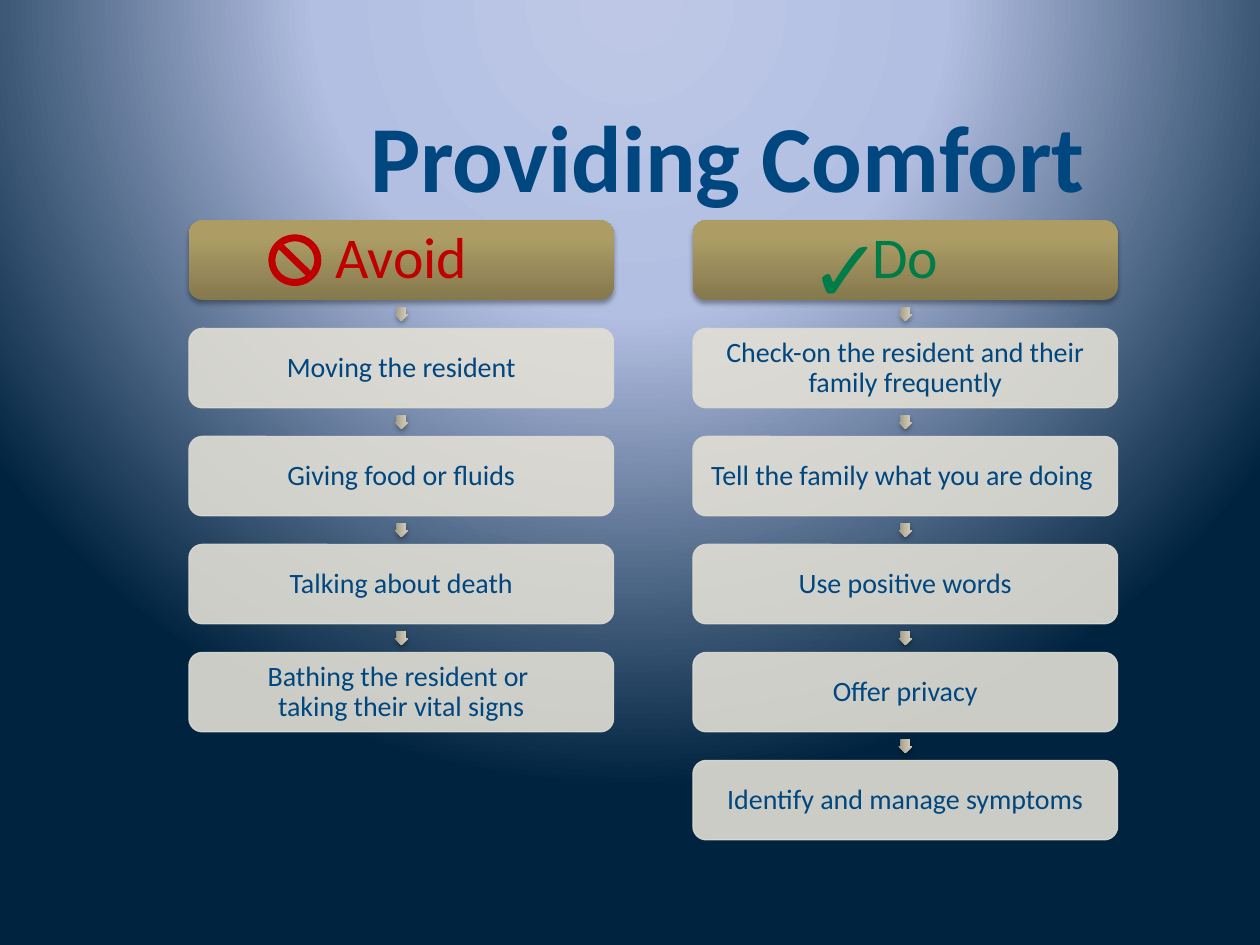
"""Build the Providing Comfort slide: two columns of things to avoid and to do."""
from lxml import etree
from pptx import Presentation
from pptx.dml.color import RGBColor
from pptx.enum.shapes import MSO_SHAPE
from pptx.enum.text import MSO_ANCHOR, MSO_AUTO_SIZE, PP_ALIGN
from pptx.oxml import parse_xml
from pptx.oxml.ns import qn
from pptx.util import Inches, Pt

ROUNDED = MSO_SHAPE.ROUNDED_RECTANGLE
ARROW = MSO_SHAPE.RIGHT_ARROW
NO_SIGN = MSO_SHAPE.NO_SYMBOL
CENTER = PP_ALIGN.CENTER
MIDDLE = MSO_ANCHOR.MIDDLE
GROW = MSO_AUTO_SIZE.SHAPE_TO_FIT_TEXT

TITLE = "Providing Comfort"
AVOID = ("Avoid", "C00000", [
    "Moving the resident",
    "Giving food or fluids",
    "Talking about death",
    "Bathing the resident or \vtaking their vital signs",
])
DO = ("Do", "007C48", [
    "Check-on the resident and their family frequently",
    "Tell the family what you are doing ",
    "Use positive words",
    "Offer privacy",
    "Identify and manage symptoms",
])
COLUMNS = [AVOID, DO]

FONT = "Calibri"
NAVY = "00467F"
BACKDROP = [(0, "BEC8E6"), (40, "B3BFE2"), (100, "00233F")]
GLOW = '<a:path path="circle"><a:fillToRect l="50000" t="-80000" r="50000" b="180000"/></a:path>'
UPWARD = '<a:lin ang="16200000" scaled="0"/>'
HEADING_STOPS = [(0, "85794E"), (80, "AD9D65"), (100, "AF9E64")]
ARROW_STOPS = [(0, "9E9A89"), (80, "CEC7B2"), (100, "CFC9B2")]

SLIDE_W, SLIDE_H = 10, 7.5
LEFT, TOP = 1.5, 1.75
COLUMN_STEP, ROW_STEP = 4, 6 / 7
BOX_W, BOX_H = 3.37, 0.63
ARROW_SIZE = 0.11
A_NS = "http://schemas.openxmlformats.org/drawingml/2006/main"


def color(value):
    return RGBColor.from_string(value)


def inches(*lengths):
    return [Inches(length) for length in lengths]


def set_gradient(fill, parent, stops, direction):
    fill.solid()
    marks = "".join(f'<a:gs pos="{at * 1000}"><a:srgbClr val="{value}"/></a:gs>' for at, value in stops)
    gradient = parse_xml(f'<a:gradFill xmlns:a="{A_NS}" rotWithShape="1">'
                         f"<a:gsLst>{marks}</a:gsLst>{direction}</a:gradFill>")
    solid = parent.find(qn("a:solidFill"))
    parent.replace(solid, gradient)


def add_plain(shapes, kind, *box):
    shape = shapes.add_shape(kind, *inches(*box))
    shape.shadow.inherit = False
    shape.line.fill.background()
    return shape


def add_raised(shapes, kind, stops, *box):
    shape = add_plain(shapes, kind, *box)
    properties = shape.element.spPr
    set_gradient(shape.fill, properties, stops, UPWARD)
    properties.find(qn("a:effectLst")).append(parse_xml(
        f'<a:outerShdw xmlns:a="{A_NS}" blurRad="{Pt(3.1)}" dist="{Pt(1.8)}" dir="5400000" rotWithShape="0">'
        '<a:srgbClr val="000000"><a:alpha val="35000"/></a:srgbClr></a:outerShdw>'))
    return shape


def write(shape, text, size, value, inset=None, spacing=None, align=None, bold=None):
    frame = shape.text_frame
    frame.text = text
    if inset is not None:
        frame.margin_left = frame.margin_right = Inches(inset)
        frame.margin_top = frame.margin_bottom = Inches(inset)
        frame.vertical_anchor = MIDDLE
    paragraph = frame.paragraphs[0]
    paragraph.alignment = align
    paragraph.line_spacing = spacing
    for run in paragraph.runs:
        run.font.name, run.font.size, run.font.bold = FONT, Pt(size), bold
        run.font.color.rgb = color(value)


def add_step(shapes, text, left, top):
    arrow_left = left + (BOX_W - ARROW_SIZE) / 2
    arrow_top = top - (ROW_STEP - BOX_H + ARROW_SIZE) / 2
    arrow = add_raised(shapes, ARROW, ARROW_STOPS, arrow_left, arrow_top, ARROW_SIZE, ARROW_SIZE)
    arrow.adjustments[0] = 0.667
    arrow.rotation = 90

    step = add_plain(shapes, ROUNDED, left, top, BOX_W, BOX_H)
    step.fill.solid()
    step.fill.fore_color.rgb = color("E2DFD5")
    step.line.color.rgb = color("DDDAD0")
    step.line.width = Pt(0.75)
    for tint in step.element.spPr.iter(qn("a:srgbClr")):
        etree.SubElement(tint, qn("a:alpha"), val="90000")
    write(step, text, 16, NAVY, 0.04, 0.9, CENTER)


def add_no_sign(shapes, value):
    sign = add_plain(shapes, NO_SIGN, 2.13, 1.86, 0.42, 0.41)
    sign.adjustments[0] = 0.135
    sign.fill.solid()
    sign.fill.fore_color.rgb = color(value)


def add_check(shapes, value):
    check = shapes.add_textbox(*inches(6.33, 1.66, 0.75, 0.94))
    write(check, "✓", 50, value)
    check.text_frame.word_wrap = False
    check.text_frame.auto_size = GROW


def main():
    deck = Presentation()
    deck.slide_width, deck.slide_height = inches(SLIDE_W, SLIDE_H)
    slide = deck.slides.add_slide(deck.slide_layouts[5])
    backdrop = slide.background.fill
    set_gradient(backdrop, slide.element.cSld.find(qn("p:bg")).find(qn("p:bgPr")), BACKDROP, GLOW)

    title = slide.shapes.title
    title.left, title.top, title.width, title.height = inches(1.72, 0.67, 8.11, 1.26)
    write(title, TITLE, 54, NAVY, 0.05, Pt(54), CENTER, True)
    title.text_frame.paragraphs[0].runs[0].font._element.insert(0, parse_xml(
        f'<a:ln xmlns:a="{A_NS}" w="{Pt(1.5)}"><a:solidFill><a:srgbClr val="948A54"/></a:solidFill></a:ln>'))

    for column, (_, _, steps) in enumerate(COLUMNS):
        for row, text in enumerate(steps, 1):
            add_step(slide.shapes, text, LEFT + column * COLUMN_STEP, TOP + row * ROW_STEP)

    for column, add_symbol in enumerate([add_no_sign, add_check]):
        heading, value, _ = COLUMNS[column]
        group = slide.shapes.add_group_shape().shapes
        left = LEFT + column * COLUMN_STEP
        banner = add_raised(group, ROUNDED, HEADING_STOPS, left, TOP, BOX_W, BOX_H)
        write(banner, heading, 33, value, 0.06, 0.9, CENTER)
        add_symbol(group, value)

    deck.save("out.pptx")


if __name__ == "__main__":
    main()
